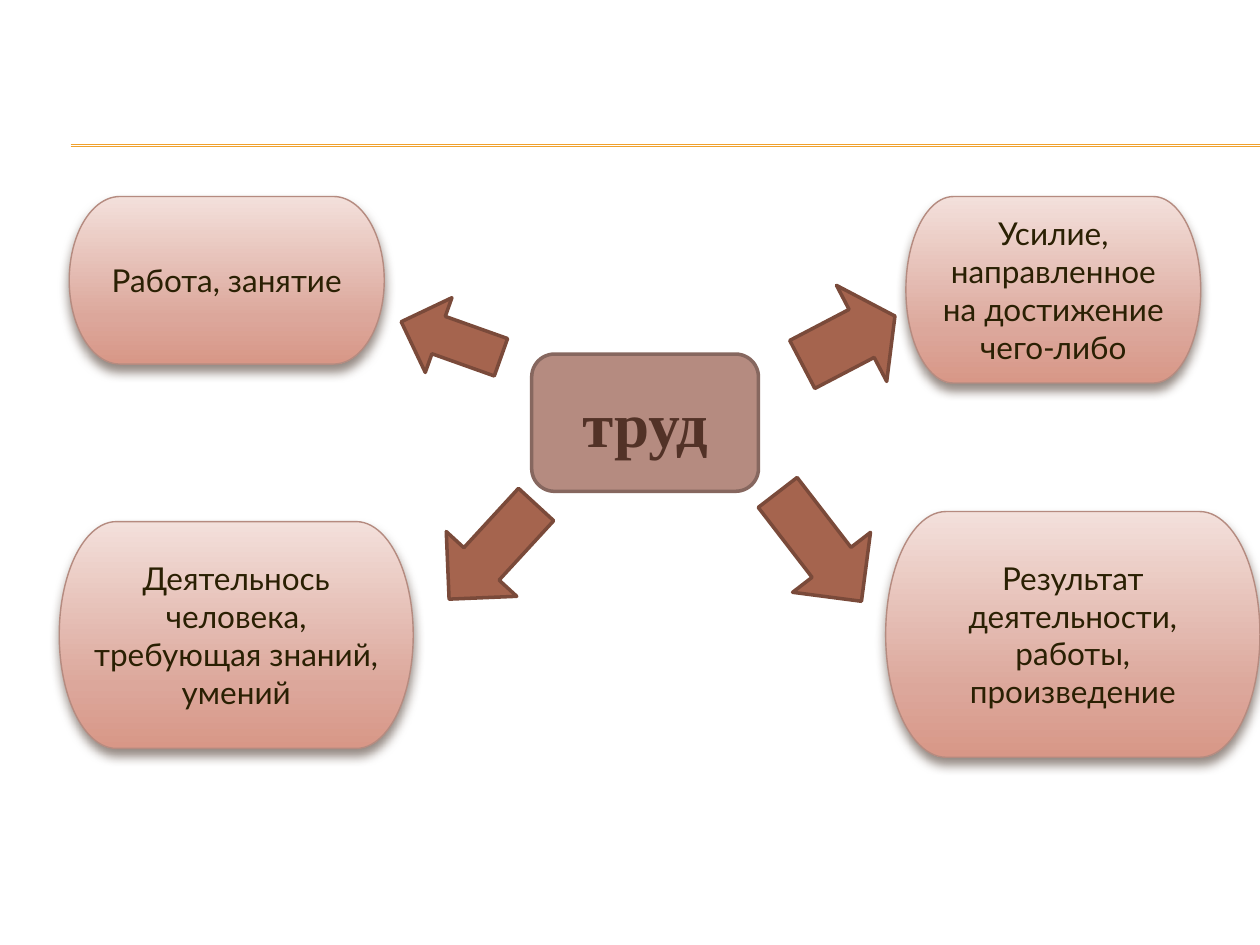
from copy import deepcopy

from lxml.etree import SubElement
from pptx import Presentation
from pptx.dml.color import RGBColor
from pptx.enum.shapes import MSO_CONNECTOR, MSO_SHAPE
from pptx.enum.text import MSO_ANCHOR, PP_ALIGN
from pptx.oxml.ns import qn
from pptx.util import Inches, Pt

THEME = {
    "rule": ("F0A22E", 0.75),
    "core": ("B58B80", "86675F", 2),
    "arrow": ("A5644E", "7A4A3A", 2),
    "meaning_edge": ("B58B80", 0.79),
    "meaning_stops": [(0, "F3E0DB"), (0.72, "DCA79B"), (1, "D89787")],
    "shadow": "4E3B30",
    "core_font": {"name": "Times New Roman", "size": Pt(36), "bold": True},
    "core_ink": "523227",
    "meaning_font": {"name": "Lato", "size": Pt(18), "bold": False},
    "meaning_ink": "2A2003",
}

deck = Presentation()
deck.slide_width, deck.slide_height = Inches(10), Inches(7.5)
slide = deck.slides.add_slide(deck.slide_layouts[6])
column, row = deck.slide_width / 100, deck.slide_height / 100


def add_block(preset, place, edge, edge_width):
    left, top, width, height = place
    block = slide.shapes.add_shape(
        preset, round(left * column), round(top * row),
        round(width * column), round(height * row))
    block.shadow.inherit = False
    block.line.color.rgb = RGBColor.from_string(edge)
    block.line.width = Pt(edge_width)
    return block


def write(block, wording, font_values, ink):
    block.text_frame.word_wrap = True
    block.text_frame.vertical_anchor = MSO_ANCHOR.MIDDLE
    paragraph = block.text_frame.paragraphs[0]
    paragraph.alignment = PP_ALIGN.CENTER
    run = paragraph.add_run()
    run.text = wording
    for attribute, value in font_values.items():
        setattr(run.font, attribute, value)
    run.font.color.rgb = RGBColor.from_string(ink)


rule_color, rule_width = THEME["rule"]
for height in (15.33, 15.47):
    rule = slide.shapes.add_connector(
        MSO_CONNECTOR.STRAIGHT, round(5.6 * column), round(height * row),
        deck.slide_width, round(height * row))
    rule.line.color.rgb = RGBColor.from_string(rule_color)
    rule.line.width = Pt(rule_width)
    SubElement(rule._element.spPr, qn("a:effectLst"))

core_fill, *core_edge = THEME["core"]
core = add_block(MSO_SHAPE.FLOWCHART_ALTERNATE_PROCESS,
                 (42.2, 37.47, 18, 14.53), *core_edge)
core.fill.solid()
core.fill.fore_color.rgb = RGBColor.from_string(core_fill)
write(core, "труд", THEME["core_font"], THEME["core_ink"])

meanings = [
    ("Работа, занятие", (5.5, 20.8, 25, 17.73)),
    ("Усилие, направленное на достижение чего-либо", (71.9, 20.8, 23.4, 19.73)),
    ("Деятельнось человека, требующая знаний, умений", (4.7, 55.2, 28.1, 24)),
    ("Результат деятельности, работы, произведение", (70.3, 54.13, 29.7, 26)),
]
for wording, place in meanings:
    meaning = add_block(MSO_SHAPE.FLOWCHART_TERMINATOR, place, *THEME["meaning_edge"])
    meaning.fill.gradient()
    meaning.fill.gradient_angle = 270
    properties = meaning._element.spPr
    stop_list = properties.find(".//" + qn("a:gsLst"))
    stop_list.append(deepcopy(stop_list[-1]))
    for stop, (position, color) in zip(meaning.fill.gradient_stops, THEME["meaning_stops"]):
        stop.position = position
        stop.color.rgb = RGBColor.from_string(color)
    shadow = SubElement(
        properties.find(qn("a:effectLst")), qn("a:outerShdw"),
        blurRad=str(Pt(6)), dist=str(Pt(4)), dir="5400000", rotWithShape="0")
    shade = SubElement(shadow, qn("a:srgbClr"), val=THEME["shadow"])
    SubElement(shade, qn("a:alpha"), val="60000")
    write(meaning, wording, THEME["meaning_font"], THEME["meaning_ink"])

arrows = [
    ((31.6, 31.73, 8.4, 8.4), 19.6, 0.5),
    ((34, 53.33, 10.2, 10.13), 312.6, 0.5),
    ((63.2, 30.27, 8.3, 11.47), 152.4, 0.36),
    ((59.6, 52.67, 10.9, 10.4), 232.4, 0.5),
]
arrow_fill, *arrow_edge = THEME["arrow"]
for place, turn, head in arrows:
    arrow = add_block(MSO_SHAPE.LEFT_ARROW, place, *arrow_edge)
    arrow.fill.solid()
    arrow.fill.fore_color.rgb = RGBColor.from_string(arrow_fill)
    arrow.rotation = turn
    arrow.adjustments[1] = head

deck.save("out.pptx")
